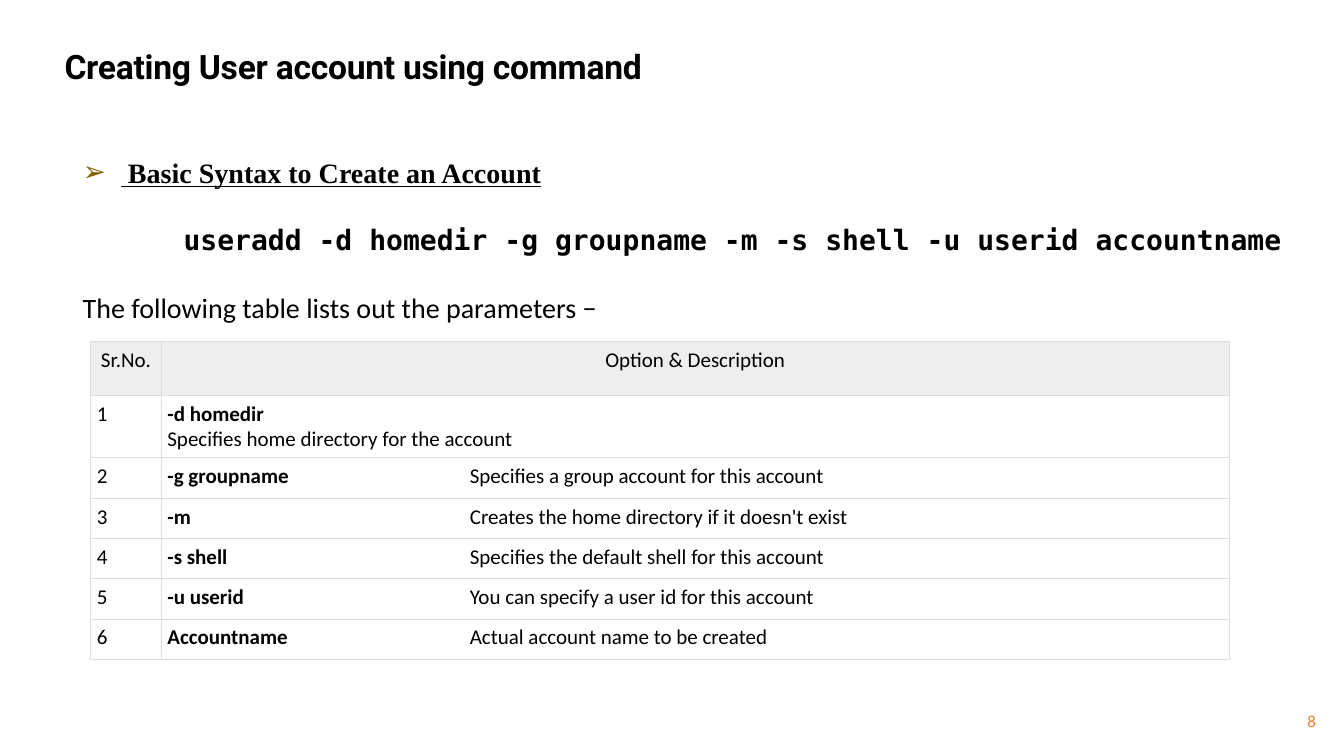
from lxml import etree
from pptx import Presentation
from pptx.dml import color
from pptx.enum import text
from pptx.oxml import ns
from pptx.util import Inches, Pt

INK, ACCENT, BULLET = "000000", "ED7D31", "806000"
HEADER_FILL, ROW_FILL, RULE = "EEEEEE", "FFFFFF", "DDDDDD"
ALIGN = text.PP_ALIGN
OPTIONS = [
    ("-d homedir", "Specifies home directory for the account"),
    ("-g groupname", "Specifies a group account for this account"),
    ("-m", "Creates the home directory if it doesn't exist"),
    ("-s shell", "Specifies the default shell for this account"),
    ("-u userid", "You can specify a user id for this account"),
    ("Accountname", "Actual account name to be created"),
]


def paint(target, hex_color):
    target.rgb = color.RGBColor.from_string(hex_color)


def apply(target, formats):
    for name, value in formats.items():
        setattr(target, name, value)


def add_node(parent, tag, **attributes):
    return etree.SubElement(parent, ns.qn(tag), attributes)


def place(shape, box):
    names = ("left", "top", "width", "height")
    apply(shape, dict(zip(names, map(Inches, box))))


def write(paragraph, words, size, font="Calibri", ink=INK, **formats):
    run = paragraph.add_run()
    run.text = words
    apply(run.font, {"size": Pt(size), "name": font, **formats})
    paint(run.font.color, ink)
    return run


def indent(paragraph, left, hanging=0):
    properties = paragraph._p.get_or_add_pPr()
    properties.set("marL", str(Inches(left)))
    properties.set("indent", str(Inches(hanging)))
    return properties


def add_heading(slide, box):
    heading = slide.shapes.title
    place(heading, box)
    frame = heading.text_frame
    apply(frame, {"word_wrap": True, "auto_size": text.MSO_AUTO_SIZE.NONE,
                  "vertical_anchor": text.MSO_ANCHOR.TOP})
    line = frame.paragraphs[0]
    line.alignment = ALIGN.LEFT
    indent(line, 0.01)
    run = write(line, "Creating User account using command", 24, "Roboto", bold=True)
    run.font._element.set("spc", "-20")


def add_syntax(slide, box):
    syntax = slide.placeholders[1]
    place(syntax, box)
    frame = syntax.text_frame
    apply(frame, {"word_wrap": True, "auto_size": text.MSO_AUTO_SIZE.NONE,
                  "vertical_anchor": text.MSO_ANCHOR.TOP})
    lines = [
        (" Basic Syntax to Create an Account", 0.57, -0.38, "➢",
         {"font": "Times New Roman", "bold": True, "underline": True}),
        ("useradd -d homedir -g groupname -m -s shell -u userid accountname",
         1.19, 0, None, {"font": "DejaVu Sans Mono", "bold": True}),
        ("The following table lists out the parameters −", 0.19, 0, None, {}),
    ]
    for index, (words, left, hanging, mark, formats) in enumerate(lines):
        line = frame.add_paragraph() if index else frame.paragraphs[0]
        properties = indent(line, left, hanging)
        if mark:
            add_node(add_node(properties, "a:buClr"), "a:srgbClr", val=BULLET)
            add_node(properties, "a:buChar", char=mark)
        else:
            add_node(properties, "a:buNone")
        apply(line, {"alignment": ALIGN.JUSTIFY, "line_spacing": 2.0,
                     "space_before": Pt(0)})
        write(line, words, 20, **formats)


def style_cell(cell, fill):
    margins = ("margin_left", "margin_right", "margin_top", "margin_bottom")
    apply(cell, dict.fromkeys(margins, Inches(0.06)))
    properties = cell._tc.get_or_add_tcPr()
    for side in ("a:lnL", "a:lnR", "a:lnT", "a:lnB"):
        border = add_node(properties, side, w=str(Pt(0.6)))
        add_node(add_node(border, "a:solidFill"), "a:srgbClr", val=RULE)
    cell.fill.solid()
    paint(cell.fill.fore_color, fill)


def describe(cell, option, description, stacked):
    line = cell.text_frame.paragraphs[0]
    line.alignment = ALIGN.JUSTIFY
    if stacked:
        write(line, option, 15, bold=True)
        line = cell.text_frame.add_paragraph()
        line.alignment = ALIGN.JUSTIFY
    else:
        tabs = add_node(line._p.get_or_add_pPr(), "a:tabLst")
        add_node(tabs, "a:tab", pos=str(Inches(3)), algn="l")
        write(line, option + "\t", 15, bold=True)
    write(line, description, 15, bold=False)


def add_options(slide, box):
    heights = [0.53, 0.62] + [0.4] * (len(OPTIONS) - 1)
    grid = slide.shapes.add_table(len(heights), 2, *map(Inches, box)).table
    number_width = 0.7
    grid.columns[0].width = Inches(number_width)
    grid.columns[1].width = Inches(box[2] - number_width)
    for row, height in zip(grid.rows, heights):
        row.height = Inches(height)
    for cell, label in zip(grid.rows[0].cells, ("Sr.No.", "Option & Description")):
        style_cell(cell, HEADER_FILL)
        line = cell.text_frame.paragraphs[0]
        line.alignment = ALIGN.CENTER
        write(line, label, 15, bold=False)
    for number, (option, description) in enumerate(OPTIONS, 1):
        number_cell, option_cell = grid.rows[number].cells
        style_cell(number_cell, ROW_FILL)
        style_cell(option_cell, ROW_FILL)
        write(number_cell.text_frame.paragraphs[0], str(number), 15, bold=False)
        describe(option_cell, option, description, stacked=number == 1)


def add_page_number(slide, box):
    frame = slide.shapes.add_textbox(*map(Inches, box)).text_frame
    apply(frame, {"word_wrap": True, "vertical_anchor": text.MSO_ANCHOR.MIDDLE})
    line = frame.paragraphs[0]
    line.alignment = ALIGN.RIGHT
    write(line, "8", 12, ink=ACCENT)


def main():
    deck = Presentation()
    apply(deck, {"slide_width": Inches(13.33), "slide_height": Inches(7.5)})
    slide = deck.slides.add_slide(deck.slide_layouts[1])
    add_page_number(slide, (12.68, 6.95, 0.47, 0.4))
    add_heading(slide, (0.53, 0.41, 11.21, 0.5))
    add_syntax(slide, (0.53, 1.16, 12.38, 3.47))
    add_options(slide, (0.9, 3.39, 11.29, 3.15))
    deck.save("out.pptx")


if __name__ == "__main__":
    main()
